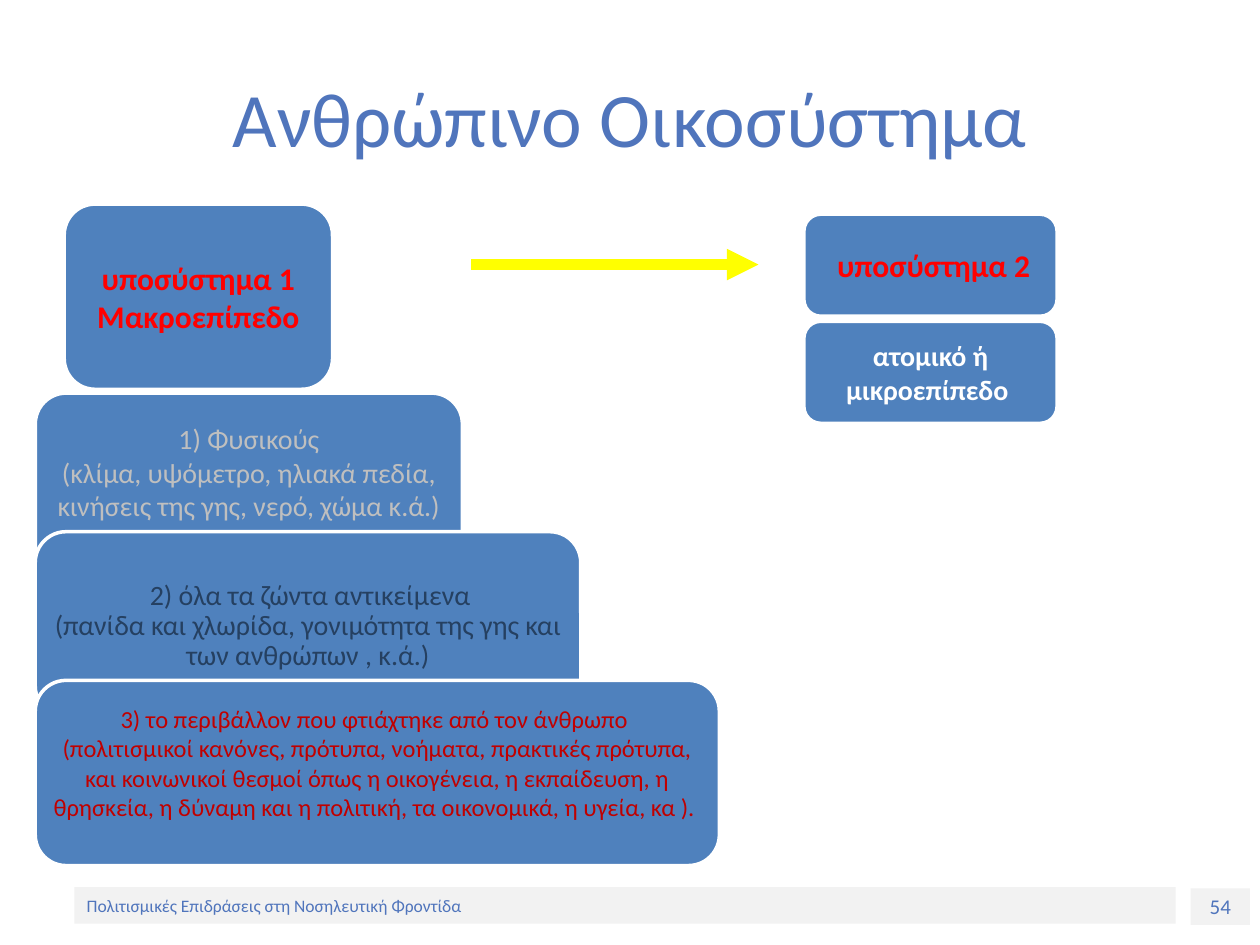
from lxml import etree
from pptx import Presentation
from pptx.dml.color import RGBColor
from pptx.enum.shapes import MSO_CONNECTOR, MSO_SHAPE
from pptx.enum.text import MSO_ANCHOR, PP_ALIGN
from pptx.oxml.ns import qn
from pptx.util import Inches, Pt

RECT, ROUNDED = MSO_SHAPE.RECTANGLE, MSO_SHAPE.ROUNDED_RECTANGLE
STRAIGHT = MSO_CONNECTOR.STRAIGHT
MIDDLE = MSO_ANCHOR.MIDDLE
LEFT, CENTER = PP_ALIGN.LEFT, PP_ALIGN.CENTER

FONT = "Calibri"
TITLE_BLUE = RGBColor(0x50, 0x75, 0xBC)
BOX_BLUE = RGBColor(0x4F, 0x81, 0xBD)
DARK_BLUE = RGBColor(0x25, 0x40, 0x61)
BAR_GRAY = RGBColor(0xF2, 0xF2, 0xF2)
TEXT_GRAY = RGBColor(0xBF, 0xBF, 0xBF)
WHITE = RGBColor(0xFF, 0xFF, 0xFF)
RED = RGBColor(0xFF, 0x00, 0x00)
DARK_RED = RGBColor(0xC0, 0x00, 0x00)
YELLOW = RGBColor(0xFF, 0xFF, 0x00)

LEVEL_LEFT, LEVEL_HEIGHT = 0.28, 1.47
SIDE_LEFT, SIDE_WIDTH, SIDE_HEIGHT = 6.38, 2.01, 0.81


def add_run(para, text, size, color, bold=False):
    span = para.add_run()
    span.text = text
    span.font.name = FONT
    span.font.size = Pt(size)
    span.font.color.rgb = color
    span.font.bold = bold


def write_paragraphs(frame, paragraphs, align=CENTER):
    """Write each paragraph, given as a list of (text, size, color[, bold])."""
    for index, runs in enumerate(paragraphs):
        para = frame.paragraphs[0] if index == 0 else frame.add_paragraph()
        para.alignment = align
        for run in runs:
            add_run(para, *run)


def add_box(page, kind, place, fill, paragraphs, align=CENTER):
    box = page.shapes.add_shape(kind, *(Inches(value) for value in place))
    box.shadow.inherit = False
    box.fill.solid()
    box.fill.fore_color.rgb = fill
    box.line.fill.background()
    frame = box.text_frame
    frame.word_wrap = True
    frame.vertical_anchor = MIDDLE
    write_paragraphs(frame, paragraphs, align)
    return box


def add_card(page, place, paragraphs, side=0.07, bottom=0.03):
    card = add_box(page, ROUNDED, place, BOX_BLUE, paragraphs)
    card.line.color.rgb = WHITE
    card.line.width = Pt(2)
    frame = card.text_frame
    frame.margin_left = frame.margin_right = Inches(side)
    frame.margin_top, frame.margin_bottom = Inches(0.03), Inches(bottom)
    return card


def add_arrow(page, start, end):
    ends = [Inches(value) for value in start + end]
    arrow = page.shapes.add_connector(STRAIGHT, *ends)
    arrow.line.color.rgb = YELLOW
    arrow.line.width = Pt(6)
    etree.SubElement(arrow.line._get_or_add_ln(), qn("a:tailEnd"), type="triangle")
    etree.SubElement(arrow._element.spPr, qn("a:effectLst"))


def add_title(page, text):
    title = page.shapes.title
    title.left, title.top = Inches(0.5), Inches(0.3)
    title.width, title.height = Inches(9), Inches(1.25)
    title.text_frame.vertical_anchor = MIDDLE
    write_paragraphs(title.text_frame, [[(text, 44, TITLE_BLUE)]])


def main():
    deck = Presentation()
    deck.slide_width, deck.slide_height = Inches(10), Inches(7.5)
    page = deck.slides.add_slide(deck.slide_layouts[5])

    # Footer bar and page number
    add_box(page, RECT, (9.45, 7.05, 0.47, 0.29), BAR_GRAY,
            [[("54", 12, TITLE_BLUE)]])
    add_box(page, RECT, (0.59, 7.04, 8.74, 0.29), BAR_GRAY,
            [[("Πολιτισμικές Επιδράσεις στη Νοσηλευτική Φροντίδα", 10, TITLE_BLUE)]],
            LEFT)

    add_title(page, "Ανθρώπινο Οικοσύστημα")

    # Subsystem 1 and its three levels
    add_card(page, (0.51, 1.62, 2.13, LEVEL_HEIGHT),
             [[("υποσύστημα 1", 18, RED, True)],
              [("Μακροεπίπεδο", 18, RED, True)]])
    add_card(page, (LEVEL_LEFT, 3.12, 3.39, LEVEL_HEIGHT),
             [[("1) Φυσικούς", 16, TEXT_GRAY)],
              [("(κλίμα, υψόμετρο, ηλιακά πεδία, κινήσεις της γης, "
                "νερό, χώμα κ.ά.)", 16, TEXT_GRAY)]], bottom=0.25)
    living = add_card(page, (LEVEL_LEFT, 4.22, 4.33, LEVEL_HEIGHT),
                      [[(" ", 11, DARK_BLUE),
                        ("2) όλα τα ζώντα αντικείμενα", 16, DARK_BLUE)],
                       [("(πανίδα και χλωρίδα, γονιμότητα της γης και "
                         "των ανθρώπων , κ.ά.)", 16, DARK_BLUE)]], side=0.05)
    living.text_frame.paragraphs[1].line_spacing = 0.9
    add_card(page, (LEVEL_LEFT, 5.4, 5.43, LEVEL_HEIGHT),
             [[("3) το περιβάλλον που φτιάχτηκε από τον άνθρωπο ", 14, DARK_RED)],
              [("(πολιτισμικοί κανόνες, πρότυπα, νοήματα, πρακτικές πρότυπα, "
                "και κοινωνικοί θεσμοί όπως η οικογένεια, η εκπαίδευση, "
                "η θρησκεία, η δύναμη και η πολιτική, τα οικονομικά, "
                "η υγεία, κα ). ", 14, DARK_RED)]], side=0.06, bottom=0.19)

    # Subsystem 2
    add_card(page, (SIDE_LEFT, 1.7, SIDE_WIDTH, SIDE_HEIGHT),
             [[(" ", 16, WHITE, True), ("υποσύστημα 2", 18, RED, True)]])
    add_card(page, (SIDE_LEFT, 2.55, SIDE_WIDTH, SIDE_HEIGHT),
             [[("ατομικό ή μικροεπίπεδο ", 16, WHITE, True)]])

    # Arrow from subsystem 1 to subsystem 2
    add_arrow(page, (3.74, 2.1), (6.02, 2.1))

    deck.save("out.pptx")


if __name__ == "__main__":
    main()
